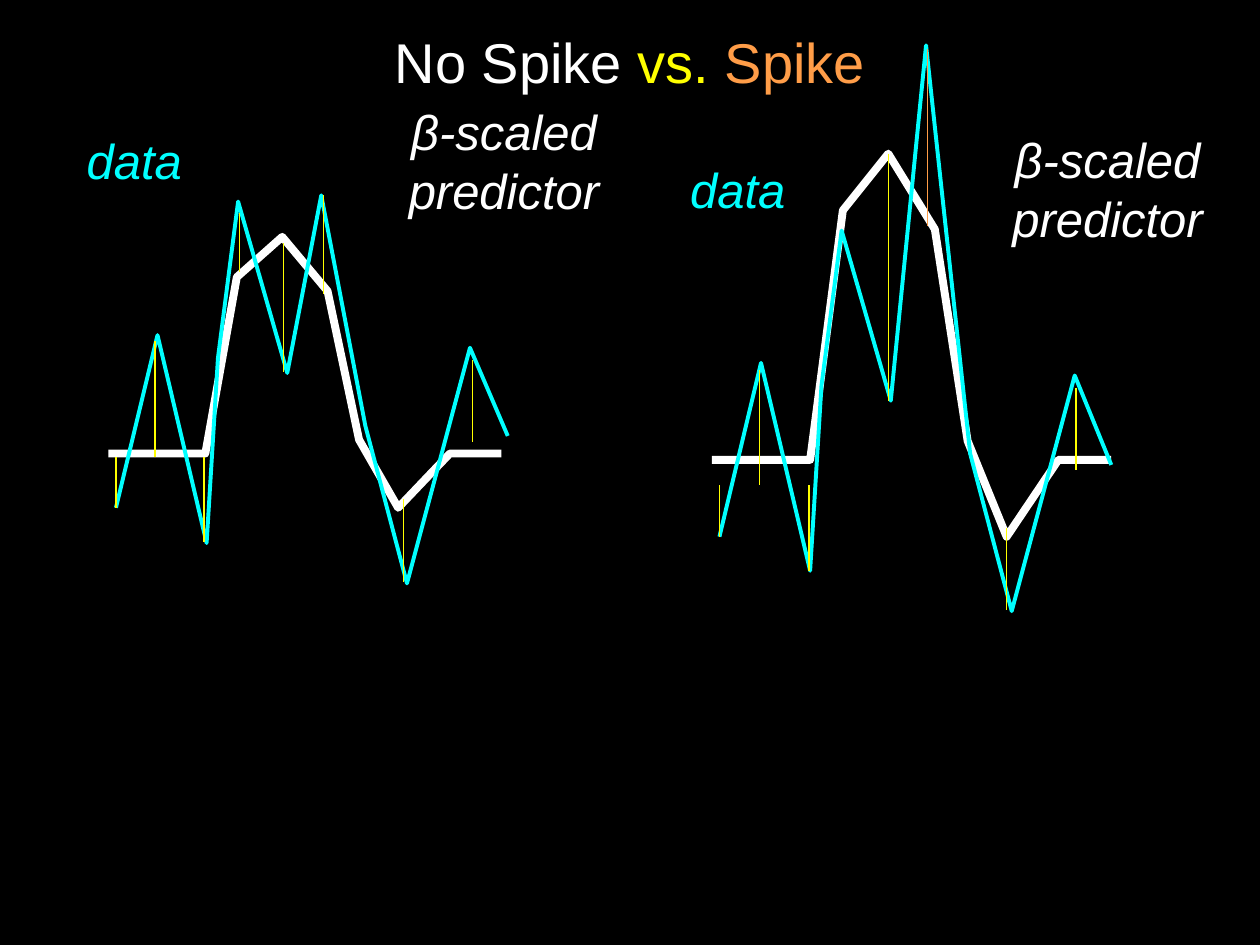
"""Build a slide that sets data against a scaled predictor, with and without a spike."""
from pptx import Presentation
from pptx.dml.color import RGBColor
from pptx.enum.shapes import MSO_CONNECTOR
from pptx.enum.text import MSO_ANCHOR, PP_ALIGN
from pptx.oxml.ns import qn
from pptx.util import Inches, Pt
from lxml import etree

STRAIGHT = MSO_CONNECTOR.STRAIGHT
MIDDLE, TOP = MSO_ANCHOR.MIDDLE, MSO_ANCHOR.TOP
LEFT, CENTER = PP_ALIGN.LEFT, PP_ALIGN.CENTER
BLACK = RGBColor(0x00, 0x00, 0x00)
WHITE = RGBColor(0xFF, 0xFF, 0xFF)
YELLOW = RGBColor(0xFF, 0xFF, 0x00)
ORANGE = RGBColor(0xFF, 0x9D, 0x48)
CYAN = RGBColor(0x00, 0xFF, 0xFF)

TITLE = [("No Spike ", WHITE), ("vs. ", YELLOW), ("Spike", ORANGE)]
SPIKE = {
    "model": [(5.65, 3.65), (6.43, 3.65), (6.69, 1.67), (7.05, 1.22), (7.42, 1.82),
              (7.68, 3.5), (7.99, 4.26), (8.4, 3.65), (8.82, 3.65)],
    "data": [(5.71, 4.26), (6.04, 2.88), (6.43, 4.53), (6.52, 3.06), (6.68, 1.83),
             (7.07, 3.18), (7.35, 0.36), (7.7, 3.6), (8.03, 4.85), (8.53, 2.98),
             (8.82, 3.69)],
    "gaps": [(5.71, 3.85, 4.26, YELLOW), (6.03, 2.94, 3.85, YELLOW),
             (6.42, 3.85, 4.53, YELLOW), (7.05, 1.22, 3.18, YELLOW),
             (7.36, 0.39, 1.79, ORANGE), (7.99, 4.19, 4.84, YELLOW),
             (8.54, 3.08, 3.73, YELLOW)],
    "labels": [("data", CYAN, LEFT, False, (5.38, 1.22, 0.97, 0.57)),
               ("β-scaled predictor", WHITE, CENTER, True, (7.79, 0.98, 2, 1.04))],
}
PLAIN = {
    "model": [(0.86, 3.6), (1.63, 3.6), (1.88, 2.2), (2.24, 1.88), (2.6, 2.31),
              (2.85, 3.49), (3.16, 4.03), (3.57, 3.6), (3.98, 3.6)],
    "data": [(0.92, 4.03), (1.25, 2.66), (1.64, 4.31), (1.73, 2.84), (1.89, 1.6),
             (2.28, 2.96), (2.55, 1.55), (2.9, 3.38), (3.23, 4.63), (3.73, 2.76),
             (4.03, 3.46)],
    "gaps": [(0.92, 3.63, 4.03, YELLOW), (1.23, 2.71, 3.63, YELLOW),
             (1.62, 3.63, 4.3, YELLOW), (1.9, 1.69, 2.16, YELLOW),
             (2.25, 1.93, 2.95, YELLOW), (2.57, 1.55, 2.33, YELLOW),
             (3.2, 3.96, 4.62, YELLOW), (3.75, 2.86, 3.51, YELLOW)],
    "labels": [("data", CYAN, LEFT, False, (0.59, 0.99, 0.97, 0.57)),
               ("β-scaled predictor", WHITE, CENTER, True, (3, 0.76, 2, 1.04))],
}


def add_text(slide, runs, box, size, align, anchor=TOP, wrap=True, italic=False):
    frame = slide.shapes.add_textbox(*map(Inches, box)).text_frame
    frame.word_wrap, frame.vertical_anchor = wrap, anchor
    para = frame.paragraphs[0]
    para.alignment = align
    for text, color in runs:
        run = para.add_run()
        run.text = text
        style = {"name": "Arial", "size": Pt(size), "italic": italic}
        for key, value in style.items():
            setattr(run.font, key, value)
        run.font.color.rgb = color


def add_curve(slide, points, color, width):
    first, *rest = [(Inches(x), Inches(y)) for x, y in points]
    pen = slide.shapes.build_freeform(*first)
    pen.add_line_segments(rest, close=False)
    curve = pen.convert_to_shape()
    curve.shadow.inherit = False
    curve.fill.background()
    curve.line.color.rgb, curve.line.width = color, Pt(width)


def add_gap(slide, x, top, end, color):
    ends = map(Inches, (x, top, x, end))
    gap = slide.shapes.add_connector(STRAIGHT, *ends)
    gap.line.color.rgb, gap.line.width = color, Pt(0.75)
    etree.SubElement(gap.element.spPr, qn("a:effectLst"))


def add_plot(slide, plot):
    add_curve(slide, plot["model"], WHITE, 4.5)
    add_curve(slide, plot["data"], CYAN, 2.25)
    for gap in plot["gaps"]:
        add_gap(slide, *gap)
    for text, color, align, wrap, box in plot["labels"]:
        add_text(slide, [(text, color)], box, 28, align, wrap=wrap, italic=True)


def main():
    deck = Presentation()
    deck.slide_width, deck.slide_height = Inches(10), Inches(7.5)
    slide = deck.slides.add_slide(deck.slide_layouts[6])
    slide.background.fill.solid()
    slide.background.fill.fore_color.rgb = BLACK
    add_text(slide, TITLE, (0.75, 0.17, 8.5, 0.63), 32, CENTER, MIDDLE)
    for plot in (SPIKE, PLAIN):
        add_plot(slide, plot)
    deck.save("out.pptx")


if __name__ == "__main__":
    main()
